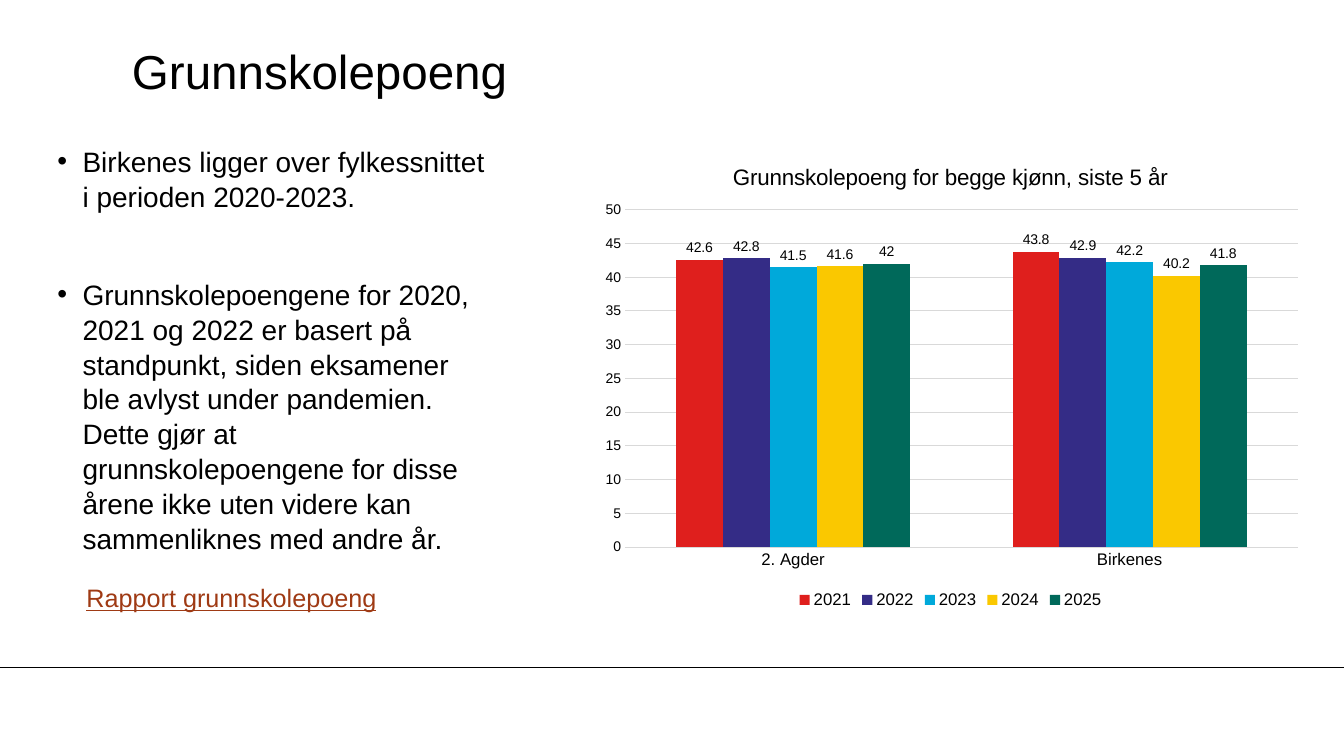
from lxml import etree
from pptx import Presentation
from pptx.chart import data
from pptx.dml.color import RGBColor
from pptx.enum import chart as ch, shapes, text
from pptx.oxml import ns
from pptx.util import Pt

FONT = "Arial"
COLORS = {"ink": "000000", "link": "9F3A14", "grid": "D9D9D9"}
HEADING = "Grunnskolepoeng"
POINTS = [
    "Birkenes ligger over fylkessnittet i perioden 2020-2023.",
    "Grunnskolepoengene for 2020, 2021 og 2022 er basert på standpunkt, siden "
    "eksamener ble avlyst under pandemien. Dette gjør at grunnskolepoengene for "
    "disse årene ikke uten videre kan sammenliknes med andre år.",
]
REPORT = "Rapport grunnskolepoeng"
CHART_TITLE = "Grunnskolepoeng for begge kjønn, siste 5 år"
AREAS = ["2. Agder", "Birkenes"]
YEARS = [
    ("2021", (42.6, 43.8), "DF1F1D"),
    ("2022", (42.8, 42.9), "342C86"),
    ("2023", (41.5, 42.2), "00A9DA"),
    ("2024", (41.6, 40.2), "FAC800"),
    ("2025", (42, 41.8), "00695A"),
]
PLOT = {"x": 0.05, "y": 0.14, "w": 0.93, "h": 0.72}
WIDTH, HEIGHT = 960, 540
RULE_Y = 476.6


def rgb(value):
    return RGBColor.from_string(value)


def style(font, size, color="ink"):
    font.name = FONT
    font.size = Pt(size)
    font.bold = False
    font.color.rgb = rgb(COLORS[color])


def add_box(left, top, width, height, inset=0):
    frame = slide.shapes.add_textbox(Pt(left), Pt(top), Pt(width), Pt(height)).text_frame
    frame.word_wrap = True
    frame.margin_left = frame.margin_right = Pt(inset)
    frame.margin_top = frame.margin_bottom = Pt(inset / 2)
    return frame


def add_run(paragraph, words, size, color="ink"):
    run = paragraph.add_run()
    run.text = words
    style(run.font, size, color)
    return run


def add_bullet(paragraph):
    props = paragraph._p.get_or_add_pPr()
    props.set("marL", str(Pt(18)))
    props.set("indent", str(-Pt(18)))
    etree.SubElement(props, ns.qn("a:buFont"), typeface=FONT)
    etree.SubElement(props, ns.qn("a:buChar"), char="•")


def grid_line(line):
    line.color.rgb = rgb(COLORS["grid"])
    line.width = Pt(0.75)


def place_plot(plot_area):
    for old in plot_area.findall(ns.qn("c:layout")):
        plot_area.remove(old)
    layout = etree.Element(ns.qn("c:layout"))
    manual = etree.SubElement(layout, ns.qn("c:manualLayout"))
    settings = {"layoutTarget": "inner", "xMode": "edge", "yMode": "edge", **PLOT}
    for tag, value in settings.items():
        etree.SubElement(manual, ns.qn(f"c:{tag}"), val=str(value))
    plot_area.insert(0, layout)


deck = Presentation()
deck.slide_width, deck.slide_height = Pt(WIDTH), Pt(HEIGHT)
slide = deck.slides.add_slide(deck.slide_layouts[6])

rule = slide.shapes.add_connector(
    shapes.MSO_CONNECTOR.STRAIGHT, Pt(0), Pt(RULE_Y), Pt(WIDTH), Pt(RULE_Y))
rule.line.color.rgb = rgb(COLORS["ink"])
rule.line.width = Pt(0.75)
etree.SubElement(rule._element.spPr, ns.qn("a:effectLst"))

heading = add_box(94.3, 23, 799.2, 54)
heading.vertical_anchor = text.MSO_ANCHOR.MIDDLE
add_run(heading.paragraphs[0], HEADING, 34)

points = add_box(41, 102.2, 311.8, 285.8)
for index, words in enumerate(POINTS):
    point = points.add_paragraph() if index else points.paragraphs[0]
    add_bullet(point)
    point.line_spacing = 1.04
    if index:
        point.space_before = Pt(45)
    add_run(point, words, 20)

report = add_box(54.7, 412.6, 237.6, 28.8, inset=7.2)
add_run(report.paragraphs[0], REPORT, 18, "link").font.underline = True

scores = data.CategoryChartData()
scores.categories = AREAS
for year, values, _ in YEARS:
    scores.add_series(year, values)
chart = slide.shapes.add_chart(
    ch.XL_CHART_TYPE.COLUMN_CLUSTERED,
    Pt(420.5), Pt(103), Pt(517), Pt(334.8), scores).chart
style(chart.font, 10)
chart.has_title = True
add_run(chart.chart_title.text_frame.paragraphs[0], CHART_TITLE, 16)
chart.has_legend = True
chart.legend.position = ch.XL_LEGEND_POSITION.BOTTOM
chart.legend.include_in_layout = False
style(chart.legend.font, 12)

areas, scale = chart.category_axis, chart.value_axis
for axis, size in ((areas, 12), (scale, 10)):
    axis.major_tick_mark = axis.minor_tick_mark = ch.XL_TICK_MARK.NONE
    style(axis.tick_labels.font, size)
grid_line(areas.format.line)
scale.format.line.fill.background()
scale.minimum_scale, scale.maximum_scale, scale.major_unit = 0, 50, 5
scale.has_major_gridlines = True
grid_line(scale.major_gridlines.format.line)

columns = chart.plots[0]
columns.gap_width, columns.overlap = 219, 0
columns.vary_by_categories = False
for series, (_, _, color) in zip(columns.series, YEARS):
    series.format.fill.solid()
    series.format.fill.fore_color.rgb = rgb(color)
    series.invert_if_negative = False
    labels = series.data_labels
    labels.show_value = True
    labels.position = ch.XL_LABEL_POSITION.OUTSIDE_END
    style(labels.font, 10)
place_plot(chart._chartSpace.chart.plotArea)

deck.save("out.pptx")
